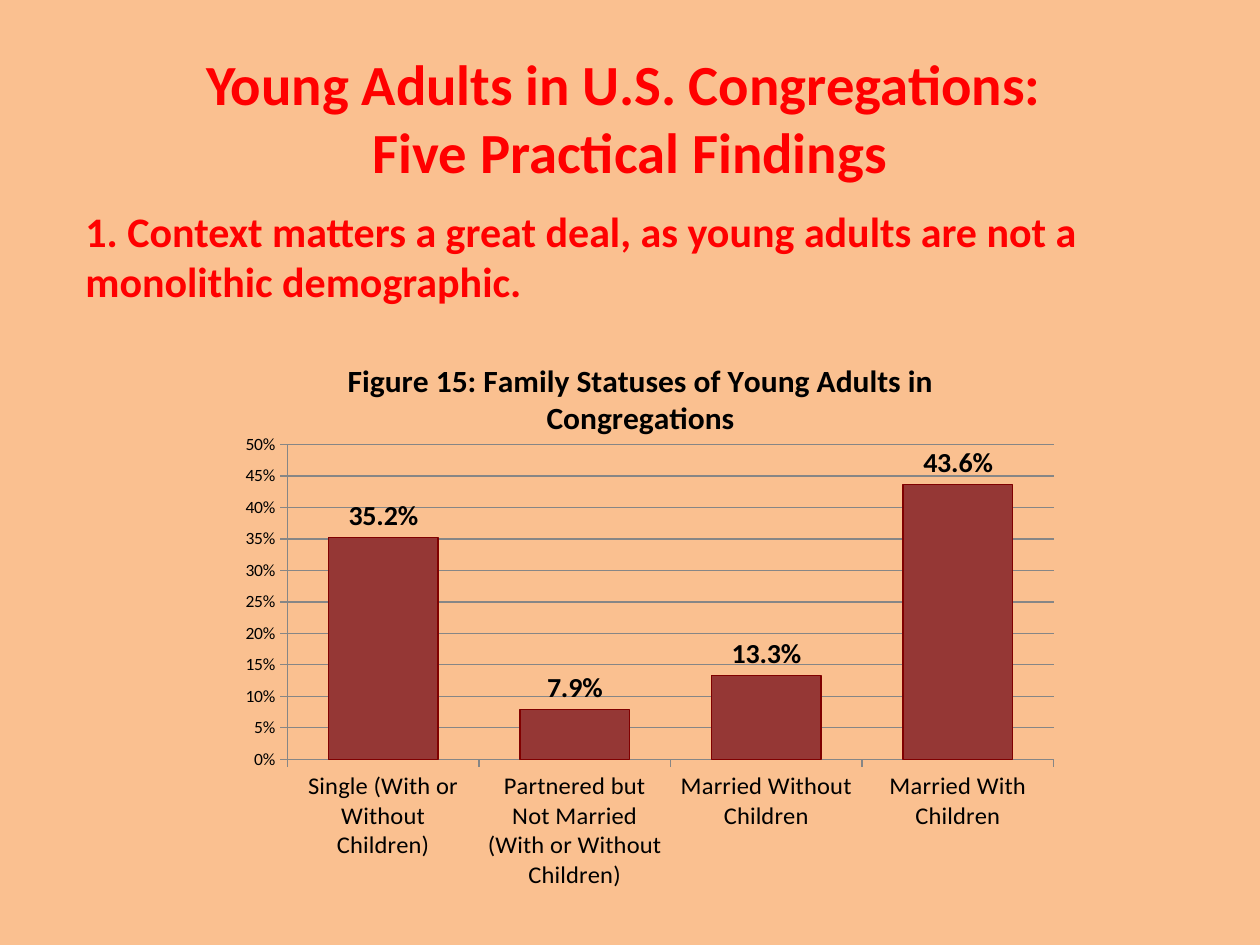
from dataclasses import dataclass

from lxml.etree import SubElement
from pptx import Presentation
from pptx.chart.data import CategoryChartData as ChartData
from pptx.dml.color import RGBColor as Color
from pptx.enum.chart import XL_CHART_TYPE as Kind
from pptx.enum.chart import XL_LABEL_POSITION as Spot
from pptx.enum.chart import XL_TICK_MARK as Tick
from pptx.enum.text import MSO_ANCHOR as Anchor
from pptx.enum.text import PP_ALIGN as Align
from pptx.oxml.ns import qn
from pptx.util import Pt

SCALE = 914400 / 126  # EMU in one px


def px(*sizes):
    return [round(size * SCALE) for size in sizes]


@dataclass(frozen=True)
class Theme:
    font: str = "Calibri"
    back: str = "FAC090"
    head: str = "FF0000"
    ink: str = "000000"
    bar: str = "953735"
    edge: str = "800000"
    grid: str = "868686"
    title: float = 32.4
    body: float = 24
    cap: float = 18
    label: float = 16
    cat: float = 14
    axis: float = 10


class Deck:
    def __init__(self, theme):
        self.theme = theme
        self.prs = Presentation()
        self.prs.slide_width, self.prs.slide_height = px(1260, 945)
        self.slide = self.prs.slides.add_slide(self.prs.slide_layouts[5])
        fill = self.slide.background.fill
        fill.solid()
        fill.fore_color.rgb = Color.from_string(theme.back)

    def style(self, font, size, color, bold=False):
        font.name, font.size, font.bold = self.theme.font, Pt(size), bold
        font.color.rgb = Color.from_string(color)

    def line(self, line, color):
        line.color.rgb = Color.from_string(color)
        line.width = Pt(0.75)

    def fill(self, shape, lines, size, anchor, align):
        frame = shape.text_frame
        frame.word_wrap = True
        frame.vertical_anchor = anchor
        para = frame.paragraphs[0]
        para.alignment = align
        for i, text in enumerate(lines):
            if i:
                para.add_line_break()
            run = para.add_run()
            run.text = text
            self.style(run.font, size, self.theme.head, True)
        return para

    def title(self, box, lines):
        shape = self.slide.shapes.title
        shape.left, shape.top, shape.width, shape.height = px(*box)
        self.fill(shape, lines, self.theme.title, Anchor.MIDDLE, Align.CENTER)

    def text(self, box, text):
        shape = self.slide.shapes.add_textbox(*px(*box))
        para = self.fill(shape, [text], self.theme.body, Anchor.TOP, Align.LEFT)
        para.space_before = Pt(self.theme.body * 0.2)

    def chart(self, box, title, rows, plot):
        theme = self.theme
        data = ChartData(number_format="0.0%")
        data.categories = [name for name, _ in rows]
        data.add_series("Series 1", [value for _, value in rows])
        chart = self.slide.shapes.add_chart(
            Kind.COLUMN_CLUSTERED, *px(*box), data).chart
        self.style(chart.font, theme.axis, theme.ink)
        chart.has_legend = False

        # Chart title
        chart.has_title = True
        run = chart.chart_title.text_frame.paragraphs[0].add_run()
        run.text = title
        self.style(run.font, theme.cap, theme.ink, True)
        chart.chart_title.include_in_layout = False

        # Axes
        cats, vals = chart.category_axis, chart.value_axis
        for axis, size in (cats, theme.cat), (vals, theme.axis):
            self.style(axis.tick_labels.font, size, theme.ink)
            axis.major_tick_mark, axis.minor_tick_mark = Tick.OUTSIDE, Tick.NONE
            self.line(axis.format.line, theme.grid)
        vals.minimum_scale, vals.maximum_scale, vals.major_unit = 0, 0.5, 0.05
        vals.tick_labels.number_format = "0%"
        vals.tick_labels.number_format_is_linked = False
        vals.has_major_gridlines = True
        self.line(vals.major_gridlines.format.line, theme.grid)

        # Bars and their labels
        bars = chart.plots[0]
        bars.gap_width = 75
        bars.vary_by_categories = False
        look = bars.series[0].format
        look.fill.solid()
        look.fill.fore_color.rgb = Color.from_string(theme.bar)
        self.line(look.line, theme.edge)
        bars.has_data_labels = True
        labels = bars.data_labels
        labels.show_value = True
        labels.number_format = "0.0%"
        labels.number_format_is_linked = False
        labels.position = Spot.OUTSIDE_END
        self.style(labels.font, theme.label, theme.ink, True)
        self.place(chart, plot)

    def place(self, chart, plot):
        area = chart.element.find(".//" + qn("c:plotArea"))
        for old in area.findall(qn("c:layout")):
            area.remove(old)
        layout = SubElement(area, qn("c:layout"))
        area.insert(0, layout)
        manual = SubElement(layout, qn("c:manualLayout"))
        marks = [("layoutTarget", "inner"), ("xMode", "edge"), ("yMode", "edge")]
        for tag, value in marks + list(zip("xywh", plot)):
            SubElement(manual, qn("c:" + tag)).set("val", str(value))


def main():
    deck = Deck(Theme())

    # Heading
    deck.title((63, 38, 1134, 157),
               ["Young Adults in U.S. Congregations: ", "Five Practical Findings"])

    # Finding
    deck.text((73, 199, 1134, 147),
              "1. Context matters a great deal, as young adults are not a "
              "monolithic demographic.")

    # Family statuses
    rows = [
        ("Single (With or Without Children)", 0.352),
        ("Partnered but Not Married (With or Without Children)", 0.079),
        ("Married Without Children", 0.133),
        ("Married With Children", 0.436),
    ]
    deck.chart((210, 336, 861, 554),
               "Figure 15: Family Statuses of Young Adults in Congregations",
               rows, (0.09, 0.2, 0.89, 0.58))

    deck.prs.save("out.pptx")


if __name__ == "__main__":
    main()
